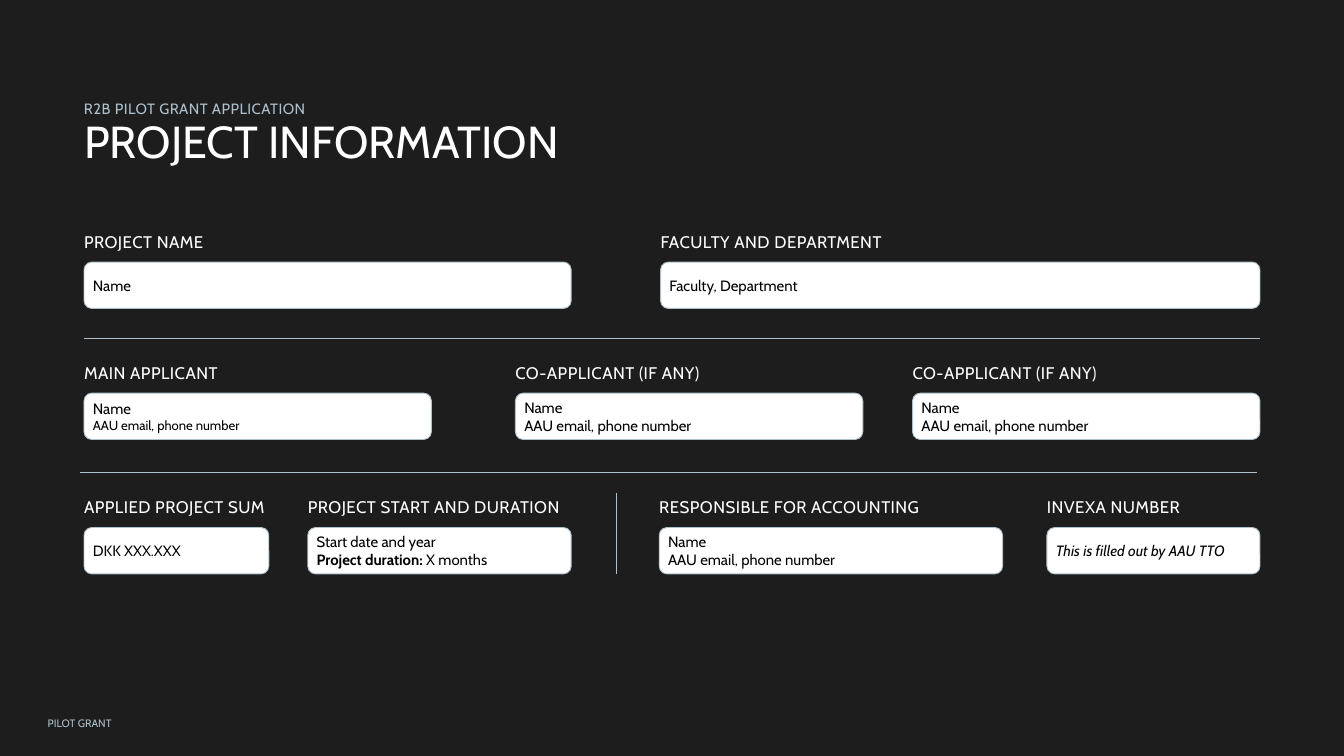
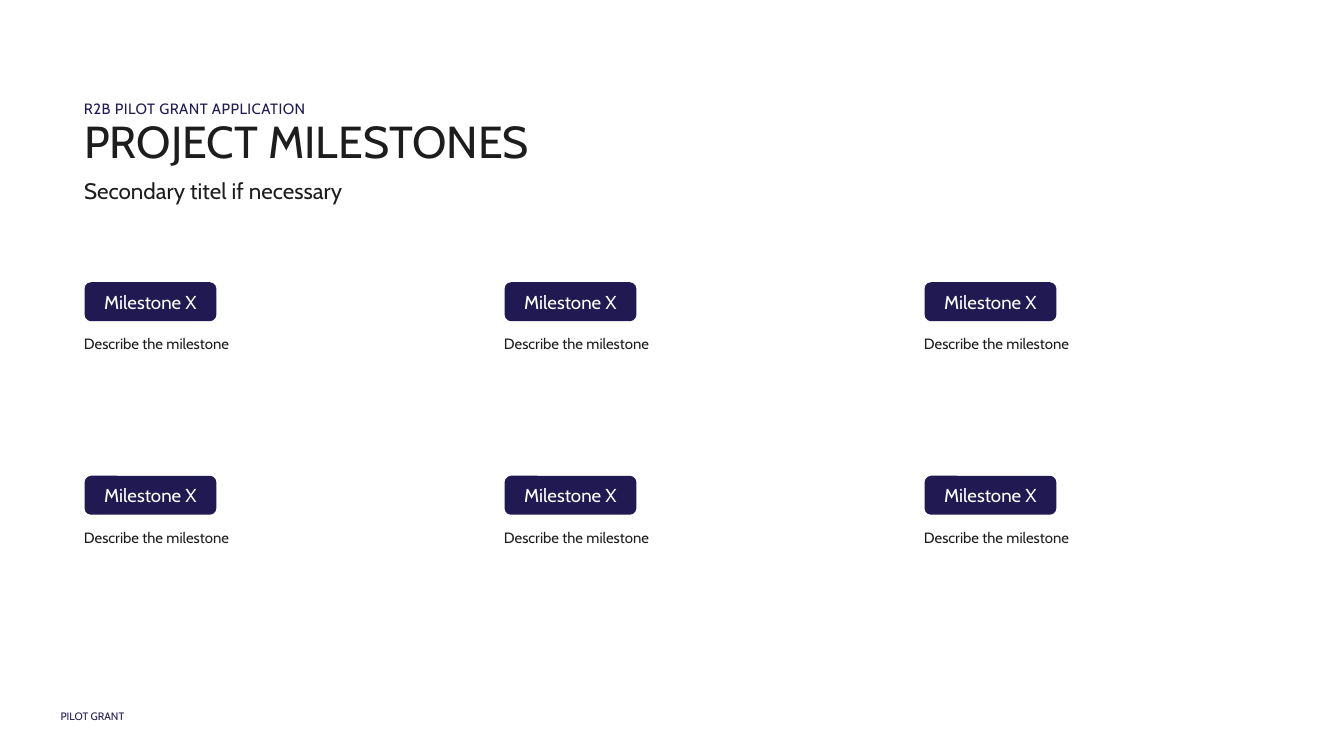
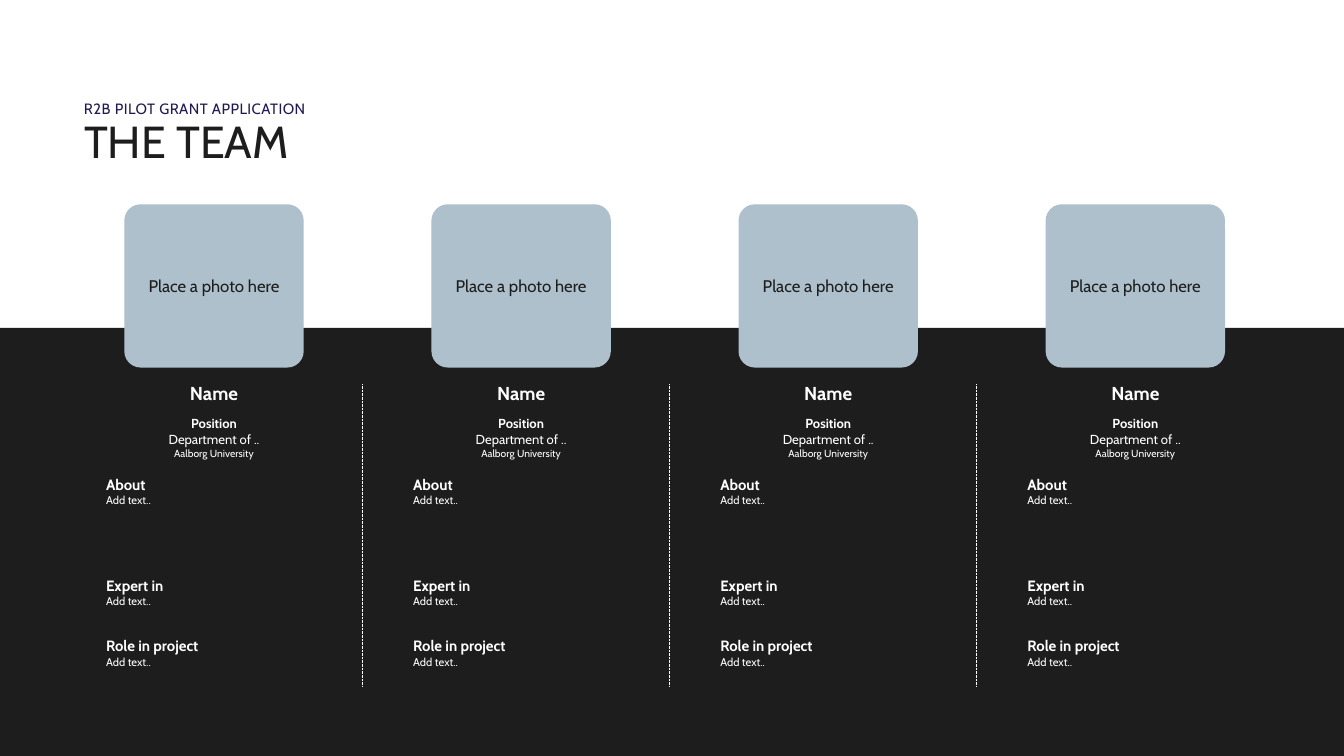
from dataclasses import dataclass

from pptx import Presentation
from pptx.dml.color import RGBColor
from pptx.enum.dml import MSO_LINE
from pptx.enum.shapes import MSO_CONNECTOR, MSO_SHAPE
from pptx.enum.text import MSO_ANCHOR, MSO_AUTO_SIZE, PP_ALIGN
from pptx.oxml.ns import qn
from pptx.util import Inches, Pt

LEFT, CENTER, JUSTIFY = PP_ALIGN.LEFT, PP_ALIGN.CENTER, PP_ALIGN.JUSTIFY
TOP, MIDDLE = MSO_ANCHOR.TOP, MSO_ANCHOR.MIDDLE
FIT = MSO_AUTO_SIZE.SHAPE_TO_FIT_TEXT
RECT, ROUNDED = MSO_SHAPE.RECTANGLE, MSO_SHAPE.ROUNDED_RECTANGLE
STRAIGHT, DOTTED = MSO_CONNECTOR.STRAIGHT, MSO_LINE.ROUND_DOT


@dataclass(frozen=True)
class Theme:
    font: str = "Cabin"
    dark: str = "1D1D1D"
    white: str = "FFFFFF"
    black: str = "000000"
    mist: str = "ADC0CC"
    navy: str = "211A52"
    title: float = 48
    subtitle: float = 24
    heading: float = 20
    label: float = 18
    body: float = 16
    small: float = 14
    note: float = 12
    footer: float = 11.5
    fine: float = 11


T = Theme()

KICKER = "R2B PILOT GRANT APPLICATION"
FOOTER = "PILOT GRANT"
MARGIN = 1.25

CONTACT = [[("Name", T.body)], [("AAU email, phone number", T.body)]]
SMALL_CONTACT = [[("Name", T.body)], [("AAU email, phone number", T.small)]]
DURATION = [
    [("Start date and year", T.body)],
    [("Project duration: ", T.body, "b"), ("X months", T.body)],
]

# label, label width, field left, field width, field content
FIELD_ROWS = [
    (3.9, [
        ("PROJECT NAME", 2.62, 1.25, 7.25, [[("Name", T.body)]]),
        ("FACULTY AND DEPARTMENT", 3.75, 9.83, 8.92, [[("Faculty, Department", T.body)]]),
    ]),
    (5.85, [
        ("MAIN APPLICANT", 2.62, 1.25, 5.17, SMALL_CONTACT),
        ("CO-APPLICANT (IF ANY)", 3.17, 7.67, 5.17, CONTACT),
        ("CO-APPLICANT (IF ANY)", 3.17, 13.58, 5.17, CONTACT),
    ]),
    (7.85, [
        ("APPLIED PROJECT SUM", 2.92, 1.25, 2.75, [[("DKK XXX.XXX", T.body)]]),
        ("PROJECT START AND DURATION", 3.92, 4.58, 3.92, DURATION),
        ("RESPONSIBLE FOR ACCOUNTING", 4.11, 9.81, 5.11, CONTACT),
        ("INVEXA NUMBER", 2.62, 15.58, 3.17,
         [[("This is filled out by AAU TTO", T.body, "i")]]),
    ]),
]
FIELD_RULES = [
    (1.25, 5.03, 18.75, 5.03),
    (1.19, 7.03, 18.7, 7.03),
    (9.17, 8.54, 9.17, 7.33),
]

MILESTONE_ROWS = [[("Milestone X", "Describe the milestone")] * 3] * 2

MEMBER = {
    "photo": "Place a photo here",
    "name": "Name",
    "post": [
        [("Position", T.small, "b")],
        [("Department of ..", T.small)],
        [("Aalborg University", T.fine)],
    ],
    "facts": [
        (7.03, "About", "Add text.."),
        (8.53, "Expert in", "Add text.."),
        (9.43, "Role in project", "Add text.."),
    ],
}
TEAM = [MEMBER] * 4


def rgb(color):
    return RGBColor.from_string(color)


def write(sp, lines, color, align=LEFT, anchor=TOP, leading=None, spacing=0):
    tf = sp.text_frame
    tf.word_wrap = True
    tf.vertical_anchor = anchor
    for i, line in enumerate(lines):
        p = tf.add_paragraph() if i else tf.paragraphs[0]
        p.alignment = align
        if leading:
            p.line_spacing = Pt(leading)
        for text, size, *style in line:
            r = p.add_run()
            r.text = text
            r.font.name = T.font
            r.font.size = Pt(size)
            r.font.color.rgb = rgb(color)
            r.font.bold = "b" in style
            r.font.italic = "i" in style
            if spacing:
                r.font._element.set("spc", str(int(spacing * 100)))


def add_text(s, box, lines, color, inset=False, **layout):
    sp = s.shapes.add_textbox(*map(Inches, box))
    tf = sp.text_frame
    if not inset:
        tf.margin_left = tf.margin_right = tf.margin_top = tf.margin_bottom = 0
    write(sp, lines, color, **layout)
    tf.auto_size = FIT


def add_block(s, kind, box, fill, line=None):
    sp = s.shapes.add_shape(kind, *map(Inches, box))
    sp.shadow.inherit = False
    sp.fill.solid()
    sp.fill.fore_color.rgb = rgb(fill)
    if line:
        sp.line.color.rgb = rgb(line)
        sp.line.width = Pt(1)
    else:
        sp.line.fill.background()
    return sp


def add_rule(s, ends, color, dash=None):
    ln = s.shapes.add_connector(STRAIGHT, *map(Inches, ends))
    ln.line.color.rgb = rgb(color)
    ln.line.width = Pt(0.75)
    if dash:
        ln.line.dash_style = dash
    sp_pr = ln._element.spPr
    sp_pr.append(sp_pr.makeelement(qn("a:effectLst"), {}))


def new_slide(prs, background):
    s = prs.slides.add_slide(prs.slide_layouts[6])
    s.background.fill.solid()
    s.background.fill.fore_color.rgb = rgb(background)
    return s


def add_title(s, title, color, accent):
    add_text(s, (MARGIN, 1.73, 8.59, 0.77), [[(title, T.title)]], color, leading=55)
    add_text(s, (MARGIN, 1.38, 5.76, 0.33), [[(KICKER, T.body)]], accent,
             align=JUSTIFY, leading=26.2, spacing=0.5)


def add_footer(s, left, top, color):
    add_text(s, (left, top, 1.01, 0.92), [[(FOOTER, T.footer)]], color,
             align=CENTER, anchor=MIDDLE, leading=84.7)


def build_information(prs):
    s = new_slide(prs, T.dark)
    add_title(s, "PROJECT INFORMATION", T.white, T.mist)
    add_footer(s, 0.68, 9.81, T.mist)
    for top, fields in FIELD_ROWS:
        for label, label_width, left, width, content in fields:
            sp = add_block(s, ROUNDED, (left, top, width, 0.69), T.white, T.mist)
            write(sp, content, T.black, anchor=MIDDLE)
            add_text(s, (left, top - 0.52, label_width, 0.32), [[(label, T.label)]],
                     T.white, leading=26.2, spacing=0.5)
    for ends in FIELD_RULES:
        add_rule(s, ends, T.mist)


def build_milestones(prs):
    s = new_slide(prs, T.white)
    add_title(s, "PROJECT MILESTONES", T.dark, T.navy)
    add_footer(s, 0.87, 9.71, T.navy)
    add_text(s, (MARGIN, 2.63, 8.59, 0.4), [[("Secondary titel if necessary", T.subtitle)]],
             T.dark, anchor=MIDDLE)
    for row, milestones in enumerate(MILESTONE_ROWS):
        top = 4.2 + row * 2.88
        for col, (name, description) in enumerate(milestones):
            left = MARGIN + col * 6.25
            sp = add_block(s, ROUNDED, (left + 0.01, top, 1.96, 0.58), T.navy)
            write(sp, [[(name, T.heading)]], T.white, align=CENTER, anchor=MIDDLE)
            add_text(s, (left, top + 0.78, 5, 0.27), [[(description, T.body)]], T.dark)


def build_team(prs):
    s = new_slide(prs, T.white)
    add_block(s, RECT, (0, 4.88, 20, 6.37), T.dark)
    add_title(s, "THE TEAM", T.dark, T.navy)
    for col, member in enumerate(TEAM):
        left = 1.48 + col * 4.57
        add_text(s, (left, 5.64, 3.41, 0.44), [[(member["name"], T.heading, "b")]],
                 T.white, inset=True, align=CENTER)
        add_text(s, (left, 6.14, 3.41, 0.76), member["post"],
                 T.white, inset=True, align=CENTER)
        for top, heading, detail in member["facts"]:
            add_text(s, (left, top, 3.42, 0.57),
                     [[(heading, T.body, "b")], [(detail, T.note)]], T.white, inset=True)
        photo = add_block(s, ROUNDED, (left + 0.37, 3.04, 2.67, 2.43), T.mist)
        photo.adjustments[0] = 0.1
        write(photo, [[(member["photo"], T.label)]], T.dark, align=CENTER, anchor=MIDDLE)
        if col < len(TEAM) - 1:
            x = left + 3.91
            add_rule(s, (x, 5.72, x, 10.21), T.white, DOTTED)


def main():
    prs = Presentation()
    prs.slide_width, prs.slide_height = Inches(20), Inches(11.25)
    build_information(prs)
    build_milestones(prs)
    build_team(prs)
    prs.save("out.pptx")


if __name__ == "__main__":
    main()
